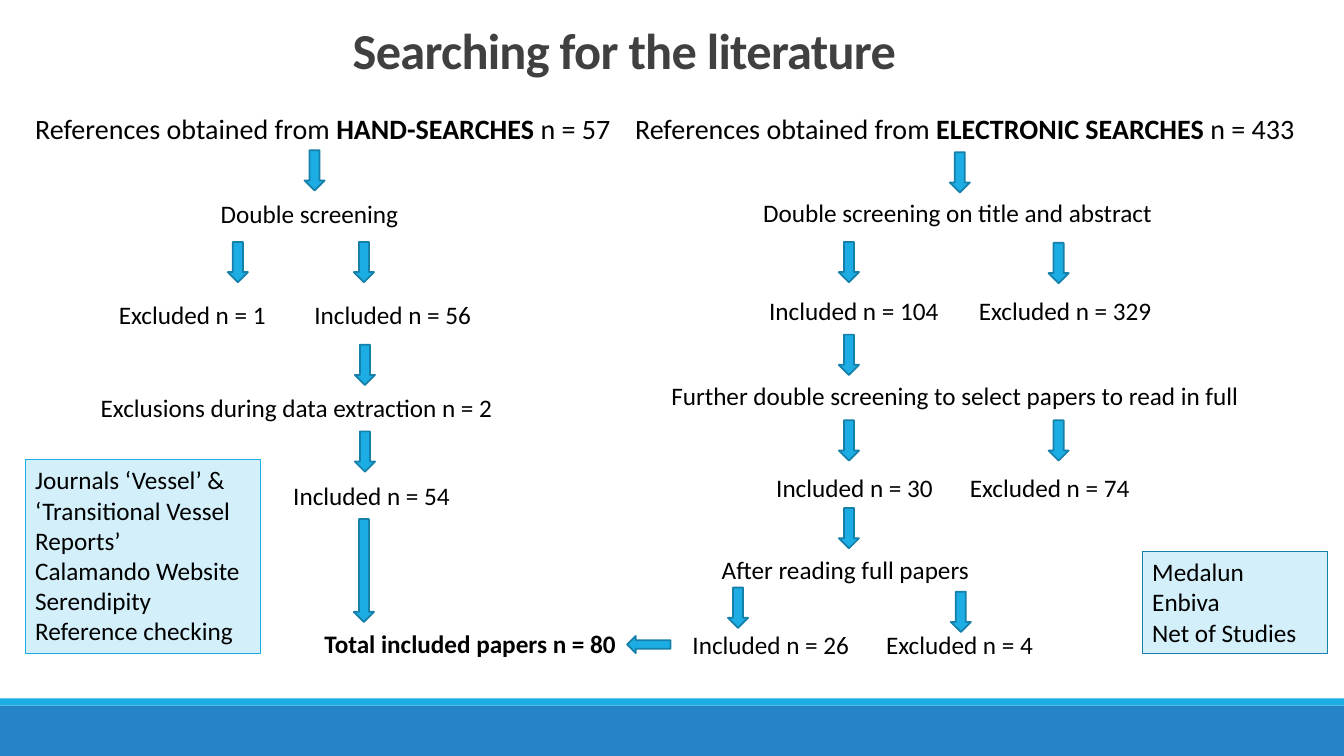
import pptx
import pptx.util
import pptx.dml.color
import pptx.enum.shapes
import pptx.enum.text

Inches, Pt = pptx.util.Inches, pptx.util.Pt
KIND = pptx.enum.shapes.MSO_SHAPE
ANCHOR = pptx.enum.text.MSO_ANCHOR
ALIGN = pptx.enum.text.PP_ALIGN

# Content
TITLE = "Searching for the literature"

# Headings: left, width, run texts (the middle run is bold)
HEADS = [
    (0.25, 5.95, ["References obtained from ", "HAND-SEARCHES", " n = 57"]),
    (6.2, 6.75, ["References obtained from ", "ELECTRONIC SEARCHES ", "n = 433"]),
]

# Steps: left, top, width, text
HAND = [
    (2.09, 1.92, 2.13, "Double screening"),
    (1.08, 2.92, 1.88, "Excluded n = 1"),
    (3.02, 2.92, 1.88, "Included n = 56"),
    (0.9, 3.84, 4.12, "Exclusions during data extraction n = 2"),
    (2.81, 4.72, 1.81, "Included n = 54"),
]
ONLINE = [
    (7.47, 1.91, 4.19, "Double screening on title and abstract"),
    (7.53, 2.88, 1.98, "Included n = 104"),
    (9.61, 2.88, 1.98, "Excluded n = 329"),
    (6.56, 3.72, 6.1, "Further double screening to select papers to read in full"),
    (7.6, 4.64, 1.91, "Included n = 30"),
    (9.52, 4.64, 1.91, "Excluded n = 74"),
    (7.06, 5.45, 2.71, "After reading full papers"),
    (6.77, 6.19, 1.9, "Included n = 26"),
    (8.69, 6.19, 1.9, "Excluded n = 4"),
]
TOTAL = (3.12, 6.18, 3.13, "Total included papers n = 80")

# Short down arrows: left, tops
DOWN = [
    (3.02, [1.49]),
    (2.26, [2.4]),
    (3.51, [2.4]),
    (3.52, [3.42, 4.28]),
    (9.42, [1.51]),
    (8.32, [2.4, 3.32, 4.17, 5.04]),
    (10.4, [2.41, 4.17]),
    (7.22, [5.83]),
    (9.43, [5.87]),
]

# Source boxes: left, top, width, height, line colour, lines
BOXES = [
    (11.33, 5.47, 1.84, 1.01, "1580A9", ["Medalun", "Enbiva", "Net of Studies"]),
    (0.25, 4.56, 2.33, 1.92, "1CADE4",
     ["Journals ‘Vessel’ & ‘Transitional Vessel Reports’",
      "Calamando Website", "Serendipity", "Reference checking"]),
]

deck = pptx.Presentation()
deck.slide_width, deck.slide_height = Inches(13.33), Inches(7.5)
slide = deck.slides.add_slide(deck.slide_layouts[6])


def hue(code):
    return pptx.dml.color.RGBColor.from_string(code)


def style(run, size=18, bold=False, color="000000"):
    font = run.font
    font.name, font.size, font.bold = "Calibri", Pt(size), bold
    font.color.rgb = hue(color)


def add_text(left, top, width, height, parts, bolds, size=18, color="000000"):
    box = slide.shapes.add_textbox(*map(Inches, (left, top, width, height)))
    box.text_frame.word_wrap = True
    para = box.text_frame.paragraphs[0]
    for part, bold in zip(parts, bolds):
        run = para.add_run()
        run.text = part
        style(run, size, bold, color)
    return box


def add_shape(kind, left, top, width, height, fill, line=None, weight=1.25):
    shape = slide.shapes.add_shape(kind, *map(Inches, (left, top, width, height)))
    shape.shadow.inherit = False
    shape.fill.solid()
    shape.fill.fore_color.rgb = hue(fill)
    if line:
        shape.line.color.rgb = hue(line)
        shape.line.width = Pt(weight)
    else:
        shape.line.fill.background()
    return shape


def add_arrow(kind, left, top, width, height):
    add_shape(kind, left, top, width, height, "1CADE4", "1580A9")


# Footer bands
add_shape(KIND.RECTANGLE, 0, 7, 13.33, 0.5, "2683C6")
add_shape(KIND.RECTANGLE, 0, 6.93, 13.33, 0.07, "1CADE4")

# Title
title = add_text(3.4, 0.23, 6.33, 0.61, [TITLE], [True], 36, "404040")
title.text_frame.vertical_anchor = ANCHOR.BOTTOM
para = title.text_frame.paragraphs[0]
para.line_spacing = 0.85
para.runs[0].font._element.set("spc", "-50")

# Headings and steps
for left, width, parts in HEADS:
    add_text(left, 1.06, width, 0.44, parts, [False, True, False], 20)
for step in HAND + ONLINE + [TOTAL]:
    left, top, width, text = step
    add_text(left, top, width, 0.4, [text], [step is TOTAL])

# Arrows
for left, tops in DOWN:
    for top in tops:
        add_arrow(KIND.DOWN_ARROW, left, top, 0.2, 0.4)
add_arrow(KIND.DOWN_ARROW, 3.51, 5.15, 0.2, 1.02)
add_arrow(KIND.LEFT_ARROW, 6.22, 6.31, 0.43, 0.17)

# Source boxes
for left, top, width, height, line, lines in BOXES:
    box = add_shape(KIND.RECTANGLE, left, top, width, height, "D2EFFA", line, 0.75)
    frame = box.text_frame
    frame.word_wrap = True
    frame.vertical_anchor = ANCHOR.TOP
    frame.text = "\n".join(lines)
    for para in frame.paragraphs:
        para.alignment = ALIGN.LEFT
        style(para.runs[0])

deck.save("out.pptx")
